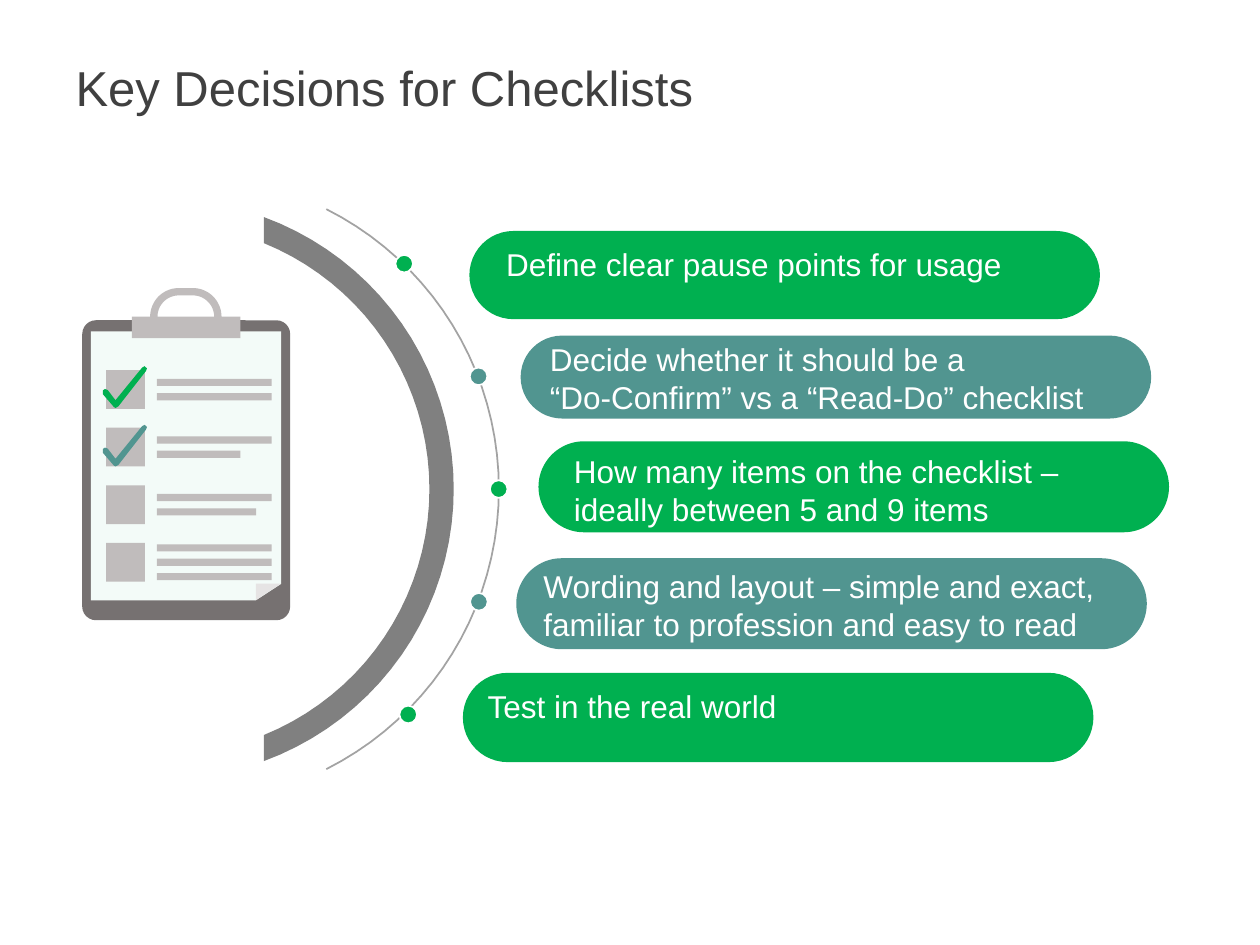
import math

import pptx
import pptx.dml.color
import pptx.enum.shapes
import pptx.enum.text
import pptx.util

Pt = pptx.util.Pt
RGBColor = pptx.dml.color.RGBColor
Shape = pptx.enum.shapes.MSO_SHAPE
Anchor = pptx.enum.text.MSO_ANCHOR
AutoSize = pptx.enum.text.MSO_AUTO_SIZE
Align = pptx.enum.text.PP_ALIGN

WHITE = RGBColor(0xFF, 0xFF, 0xFF)
GREEN = RGBColor(0x00, 0xB0, 0x50)
TEAL = RGBColor(0x51, 0x95, 0x90)
TITLE_GRAY = RGBColor(0x40, 0x40, 0x40)
BOARD_GRAY = RGBColor(0x76, 0x71, 0x71)
PALE_GRAY = RGBColor(0xC0, 0xBC, 0xBC)
PAPER = RGBColor(0xF3, 0xFB, 0xF8)
FOLD = RGBColor(0xE6, 0xE4, 0xE4)
BAND_GRAY = RGBColor(0x80, 0x80, 0x80)
ARC_GRAY = RGBColor(0xA3, 0xA3, 0xA3)


def arc(center_x, center_y, radius, start, end, steps=40):
    """Points along a circle, angles in degrees, clockwise from the right."""
    angles = [math.radians(start + (end - start) * i / steps) for i in range(steps + 1)]
    return [(center_x + radius * math.cos(a), center_y + radius * math.sin(a)) for a in angles]


class SlideBuilder:
    font = "Arial"

    def __init__(self, slide):
        self.slide = slide

    def paint(self, shape, fill=None, line=None):
        shape.shadow.inherit = False
        if fill is None:
            shape.fill.background()
        else:
            shape.fill.solid()
            shape.fill.fore_color.rgb = fill
        if line is None:
            shape.line.fill.background()
        else:
            shape.line.color.rgb = line
            shape.line.width = Pt(1)
        return shape

    def preset(self, kind, left, top, width, height, fill, line=None, corner=None):
        shape = self.slide.shapes.add_shape(kind, Pt(left), Pt(top), Pt(width), Pt(height))
        if corner is not None:
            shape.adjustments[0] = corner
        return self.paint(shape, fill, line)

    def rectangle(self, left, top, width, height, fill):
        return self.preset(Shape.RECTANGLE, left, top, width, height, fill)

    def outline(self, points, fill=None, line=None):
        points = [(Pt(x), Pt(y)) for x, y in points]
        builder = self.slide.shapes.build_freeform(*points[0])
        builder.add_line_segments(points[1:], close=fill is not None)
        return self.paint(builder.convert_to_shape(), fill, line)

    def text_run(self, paragraph, text, size, color):
        run = paragraph.add_run()
        run.text = text
        run.font.name = self.font
        run.font.size = Pt(size)
        run.font.color.rgb = color

    def title(self, text, left, top, width, height):
        shape = self.slide.shapes.title
        shape.left, shape.top, shape.width, shape.height = map(Pt, (left, top, width, height))
        frame = shape.text_frame
        frame.auto_size = AutoSize.NONE
        frame.vertical_anchor = Anchor.MIDDLE
        paragraph = frame.paragraphs[0]
        paragraph.alignment = Align.LEFT
        paragraph.line_spacing = 0.9
        self.text_run(paragraph, text, 28, TITLE_GRAY)

    def label(self, lines, left, top, width, height):
        box = self.slide.shapes.add_textbox(Pt(left), Pt(top), Pt(width), Pt(height))
        frame = box.text_frame
        frame.word_wrap = True
        frame.auto_size = AutoSize.SHAPE_TO_FIT_TEXT
        frame.vertical_anchor = Anchor.MIDDLE
        for index, line in enumerate(lines):
            paragraph = frame.add_paragraph() if index else frame.paragraphs[0]
            self.text_run(paragraph, line, 18, WHITE)


def draw_clipboard(builder):
    # Board and paper with a folded corner
    builder.preset(Shape.ROUNDED_RECTANGLE, 47, 183, 118.8, 171.4, BOARD_GRAY, corner=0.066)
    builder.outline([(160.6, 189.4), (52, 189.4), (52, 343), (146.2, 343), (160.6, 333.7)], PAPER)

    # Checkboxes, each with its text lines centred beside it
    box_size, bar_height, bar_pitch = 22.2, 4.1, 8.2
    bar_widths = [(65.5, 65.5), (65.5, 47.8), (65.5, 56.7), (65.5, 65.5, 65.5)]
    for row, widths in enumerate(bar_widths):
        top = 211.5 + 32.9 * row
        builder.rectangle(60.6, top, box_size, box_size, PALE_GRAY)
        first = top + (box_size - bar_height - bar_pitch * (len(widths) - 1)) / 2
        for index, width in enumerate(widths):
            builder.rectangle(89.7, first + bar_pitch * index, width, bar_height, PALE_GRAY)

    # Ticks
    tick = [(7.2, 23.8), (6.3, 23.3), (0, 16), (0, 13.8), (1.2, 13), (2.8, 13.6), (7.2, 19.4),
            (22.4, 0.8), (23.8, 0), (25.2, 1.2), (24.6, 2.8), (8.8, 23)]
    for top, color in ((209.3, GREEN), (242.8, TEAL)):
        builder.outline([(58.8 + x, top + y) for x, y in tick], color)

    # Page fold, clip and handle
    builder.outline([(146.2, 343), (160.6, 333.5), (146.2, 333.5)], FOLD)
    builder.rectangle(75.4, 181, 62, 12.3, PALE_GRAY)
    outer = arc(102.2, 181, 16.4, 180, 270) + arc(110.2, 181, 16.4, 270, 360)
    inner = arc(110.2, 181, 12.2, 360, 270) + arc(102.2, 181, 12.2, 270, 180)
    builder.outline(outer + inner, PALE_GRAY)


def draw_arcs(builder):
    # Thin arc with its dots
    middle = 279.5
    builder.outline(arc(106, middle, 179.1, -63.3, 63.3), line=ARC_GRAY)
    size = 10.1
    for index, center in enumerate((231, 273.5, 285, 273.7, 233.3)):
        top = middle + 64.4 * (index - 2) - size / 2
        builder.preset(Shape.OVAL, center - size / 2, top, size, size,
                       TEAL if index % 2 else GREEN, WHITE)

    # Thick band, cut off along a vertical line
    center, cut = 93.7, 150.8
    edges = []
    for radius, direction in ((165.6, 1), (151.7, -1)):
        angle = direction * math.degrees(math.acos((cut - center) / radius))
        edges += arc(center, middle, radius, -angle, angle)
    builder.outline(edges, BAND_GRAY)


def main():
    presentation = pptx.Presentation()
    presentation.slide_width, presentation.slide_height = Pt(720), Pt(540)
    builder = SlideBuilder(presentation.slides.add_slide(presentation.slide_layouts[5]))
    builder.title("Key Decisions for Checklists", 36, 30, 648, 43.2)
    draw_clipboard(builder)
    draw_arcs(builder)

    # Decisions: pill left, top, height; text left, top, width, height; lines
    decisions = [
        ((268.2, 132, 50.4), (282.2, 136.4, 345.6, 29),
         ["Define clear pause points for usage"]),
        ((297.5, 191.8, 47.4), (307.2, 190.3, 365, 51),
         ["Decide whether it should be a", "“Do-Confirm” vs a “Read-Do” checklist"]),
        ((307.7, 252.2, 52), (320.8, 254.5, 346.3, 51),
         ["How many items on the checklist – ideally between 5 and 9 items"]),
        ((295, 319, 52), (303.5, 320, 347.8, 51),
         ["Wording and layout – simple and exact, familiar to profession and easy to read"]),
        ((264.5, 384.5, 51), (271.6, 389, 331.2, 29),
         ["Test in the real world"]),
    ]
    for index, ((left, top, height), text_area, lines) in enumerate(decisions):
        builder.preset(Shape.ROUNDED_RECTANGLE, left, top, 360.3, height,
                       TEAL if index % 2 else GREEN, corner=0.5)
        builder.label(lines, *text_area)

    presentation.save("out.pptx")


if __name__ == "__main__":
    main()
